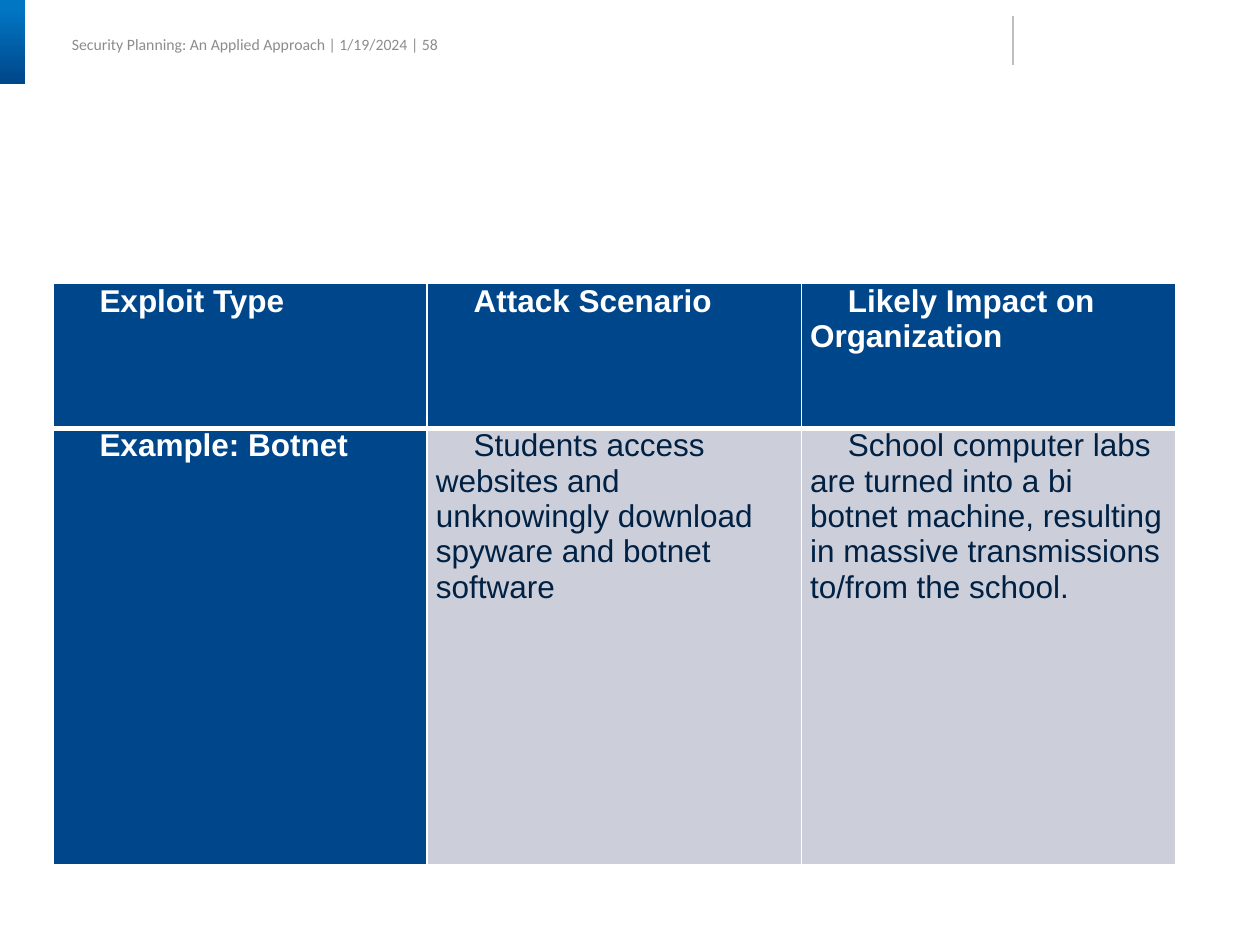
"""Builds the exploit table slide of a security planning deck."""
import lxml.etree
import pptx
import pptx.dml.color
import pptx.enum.dml
import pptx.enum.shapes
import pptx.enum.text
import pptx.oxml
import pptx.oxml.ns
import pptx.util

COLORS = {
    "navy": "00468A", "blue": "0176C3", "ink": "002143", "pale": "CCCFDA",
    "white": "FFFFFF", "gray": "8C8C8C", "rule": "BFBFBF",
}
ROWS = [
    ["Exploit Type", "Attack Scenario", "Likely Impact on Organization"],
    [
        "Example: Botnet",
        "Students access websites and unknowingly download spyware and botnet software",
        "School computer labs are turned into a bi botnet machine, "
        "resulting in massive transmissions to/from the school.",
    ],
]
ROW_HEIGHTS = [1.15, 3.46]
COLUMN_WIDTH = 2.97
inch = pptx.util.Inches


def rgb(name):
    return pptx.dml.color.RGBColor.from_string(COLORS[name])


def style(target, formats):
    for attribute, value in formats.items():
        setattr(target, attribute, value)


deck = pptx.Presentation()
style(deck, {"slide_width": inch(10), "slide_height": inch(7.5)})
slide = deck.slides.add_slide(deck.slide_layouts[6])

header = slide.shapes.add_textbox(inch(0.57), inch(0.24), inch(2.95), inch(0.23)).text_frame
style(header, {
    "margin_left": 0, "margin_top": 0, "margin_right": 0, "margin_bottom": 0,
    "word_wrap": False, "vertical_anchor": pptx.enum.text.MSO_ANCHOR.MIDDLE,
    "text": "Security Planning: An Applied Approach | 1/19/2024 | 58",
})
style(header.paragraphs[0].font, {"name": "Calibri", "size": pptx.util.Pt(9)})
header.paragraphs[0].font.color.rgb = rgb("gray")

corner = slide.shapes.add_shape(
    pptx.enum.shapes.MSO_SHAPE.RECTANGLE, 0, 0, inch(0.2), inch(0.67))
corner.shadow.inherit = False
corner.line.fill.background()
corner.fill.gradient()
corner.fill.gradient_angle = 270
for stop, (position, color) in zip(corner.fill.gradient_stops, [(0.1, "blue"), (1, "navy")]):
    stop.position = position
    stop.color.rgb = rgb(color)

divider = slide.shapes.add_connector(
    pptx.enum.shapes.MSO_CONNECTOR.STRAIGHT, inch(8.04), inch(0.13), inch(8.04), inch(0.52))
divider.line.width = pptx.util.Pt(0.75)
divider.line.color.rgb = rgb("rule")
lxml.etree.SubElement(divider.element.spPr, pptx.oxml.ns.qn("a:effectLst"))

exploits = slide.shapes.add_table(
    len(ROWS), len(ROWS[0]), inch(0.42), inch(2.25),
    inch(COLUMN_WIDTH * len(ROWS[0])), inch(sum(ROW_HEIGHTS))).table
for column in exploits.columns:
    column.width = inch(COLUMN_WIDTH)

for row_index, (texts, height) in enumerate(zip(ROWS, ROW_HEIGHTS)):
    exploits.rows[row_index].height = inch(height)
    for column_index, text in enumerate(texts):
        heading = row_index == 0 or column_index == 0
        cell = exploits.cell(row_index, column_index)
        style(cell, {
            "text": text, "margin_left": inch(0.07), "margin_right": inch(0.07),
            "margin_top": 0, "margin_bottom": 0,
        })
        cell.fill.solid()
        cell.fill.fore_color.rgb = rgb("navy" if heading else "pale")
        paragraph = cell.text_frame.paragraphs[0]
        paragraph._p.get_or_add_pPr().set("indent", str(inch(0.3)))
        style(paragraph.font, {"name": "Arial", "size": pptx.util.Pt(18), "bold": heading})
        paragraph.font.color.rgb = rgb("white" if heading else "ink")

        edges = {"lnL": 1, "lnR": 1, "lnT": 3 if row_index else 1, "lnB": 1 if row_index else 3}
        for order, (edge, points) in enumerate(edges.items()):
            cell._tc.get_or_add_tcPr().insert(order, pptx.oxml.parse_xml(
                f'<a:{edge} {pptx.oxml.ns.nsdecls("a")} w="{pptx.util.Pt(points)}">'
                f'<a:solidFill><a:srgbClr val="{COLORS["white"]}"/></a:solidFill></a:{edge}>'))

deck.save("out.pptx")
